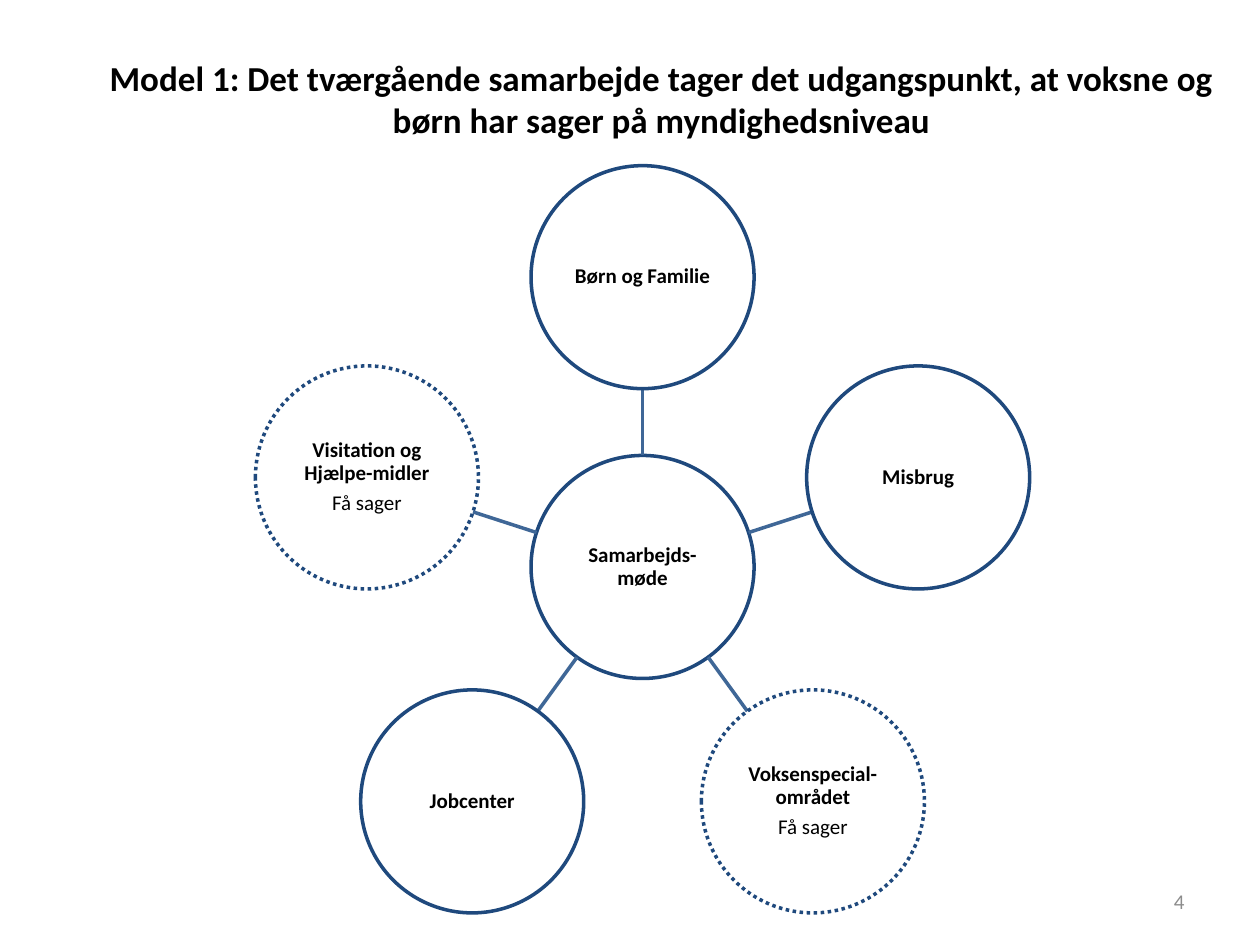
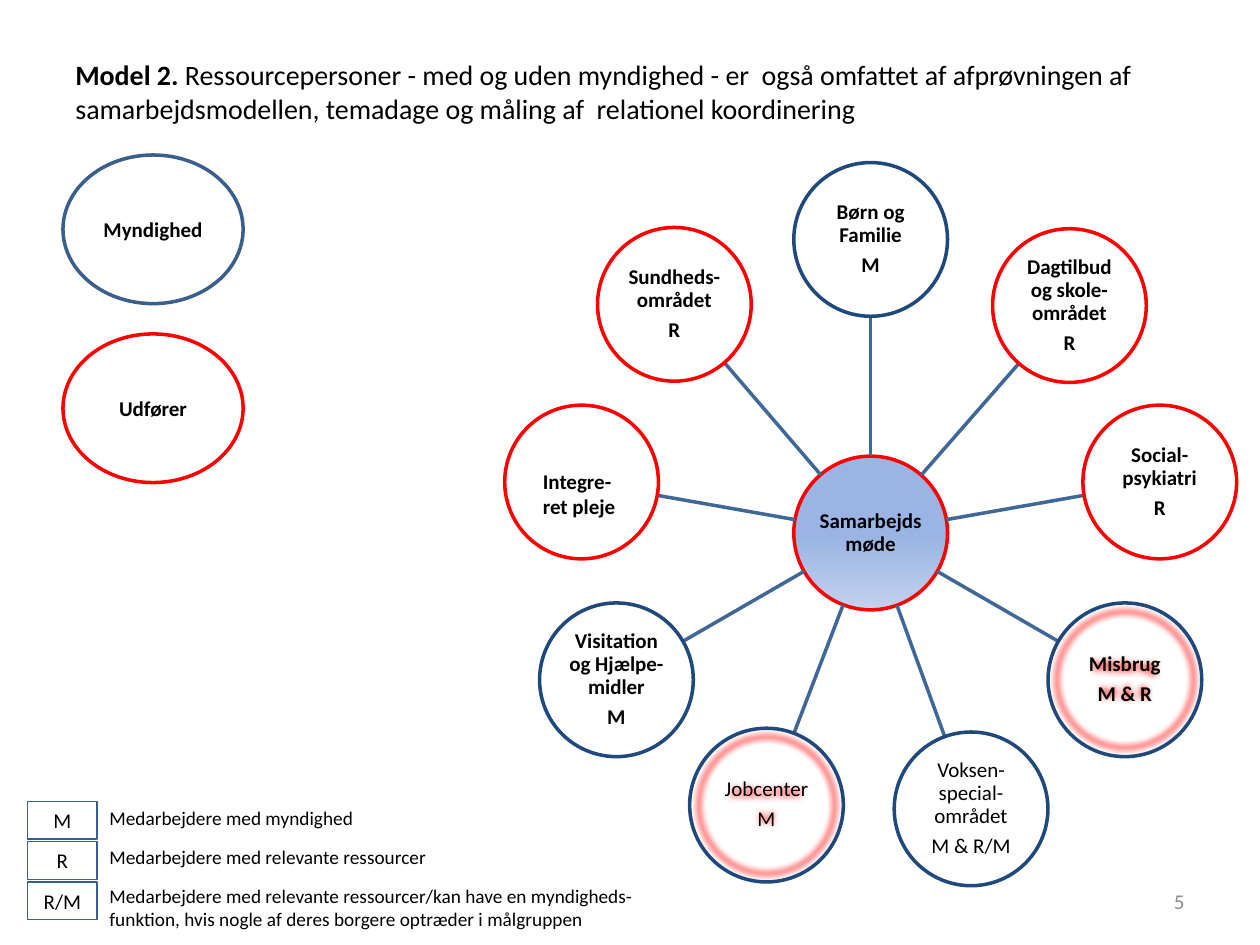
import math
from dataclasses import dataclass

from lxml import etree
from pptx import Presentation
from pptx import util as u
from pptx.dml.color import RGBColor
from pptx.enum import dml, shapes, text
from pptx.oxml.ns import qn

FONT = "Calibri"
COLORS = {
    "ink": "000000",
    "paper": "FFFFFF",
    "navy": "1F497D",
    "spoke": "3F6797",
    "steel": "3A5F8C",
    "red": "FF0000",
    "number": "8C8C8C",
    "hub_top": "9AB5E4",
    "hub_bottom": "C2D1ED",
}
NUMBER_BOX = (7.17, 6.95, 2.33, 0.4)


@dataclass
class Node:
    """One circle of a wheel: its lines of text and its style."""

    lines: tuple = ()
    outline: str = "navy"
    bold: bool = True
    dotted: bool = False
    glow: bool = False
    nudge: tuple = (0, 0)


def color(name):
    """Return a named colour."""
    return RGBColor.from_string(COLORS[name])


def write(shape, lines, size=12, bold=False, ink="ink", align=text.PP_ALIGN.LEFT,
          anchor=text.MSO_ANCHOR.TOP, inset=None, spacing=None, after=None):
    """Write the lines as paragraphs of one style; a line may be a list of (words, bold)."""
    frame = shape.text_frame
    frame.word_wrap = True
    frame.vertical_anchor = anchor
    if inset is not None:
        frame.margin_left = frame.margin_right = u.Inches(inset)
        frame.margin_top = frame.margin_bottom = u.Inches(inset)
    for index, line in enumerate(lines):
        para = frame.add_paragraph() if index else frame.paragraphs[0]
        para.alignment = align
        para.line_spacing = spacing
        para.space_after = after
        font = para.font
        font.name, font.size, font.bold = FONT, u.Pt(size), bold
        font.color.rgb = color(ink)
        if isinstance(line, str):
            para.add_run().text = line
            continue
        for words, strong in line:
            span = para.add_run()
            span.text = words
            span.font.bold = strong


def add_text(page, box, lines, **style):
    """Add a text box."""
    label = page.shapes.add_textbox(*map(u.Inches, box))
    write(label, lines, **style)
    return label


def add_outlined(page, kind, box, outline, width=2):
    """Add an unfilled shape with a coloured outline."""
    shape = page.shapes.add_shape(kind, *map(u.Inches, box))
    shape.shadow.inherit = False
    shape.fill.background()
    shape.line.color.rgb = color(outline)
    shape.line.width = u.Pt(width)
    return shape


def add_glow(shape):
    """Give a shape a soft red ring inside its outline."""
    effects = shape._element.spPr.find(qn("a:effectLst"))
    ring = etree.SubElement(effects, qn("a:outerShdw"), blurRad="50800", dist="0",
                            sx="88000", sy="88000", algn="ctr", rotWithShape="0")
    etree.SubElement(ring, qn("a:srgbClr"), val=COLORS["red"])


def add_circle(page, center, size, node):
    """Add one circle of a wheel with its text."""
    box = (center[0] - size / 2, center[1] - size / 2, size, size)
    circle = add_outlined(page, shapes.MSO_SHAPE.OVAL, box, node.outline)
    if node.dotted:
        circle.line.dash_style = dml.MSO_LINE.ROUND_DOT
    if node.glow:
        add_glow(circle)
    if node.lines:
        write(circle, node.lines, bold=node.bold, align=text.PP_ALIGN.CENTER,
              anchor=text.MSO_ANCHOR.MIDDLE, inset=0.01, spacing=0.9, after=u.Pt(4.2))
    return circle


def add_spoke(page, start, end, gap):
    """Join two circles, stopping a gap short of both centres."""
    reach = math.dist(start, end)
    step = [(b - a) * gap / reach for a, b in zip(start, end)]
    line = page.shapes.add_connector(
        shapes.MSO_CONNECTOR.STRAIGHT,
        u.Inches(start[0] + step[0]), u.Inches(start[1] + step[1]),
        u.Inches(end[0] - step[0]), u.Inches(end[1] - step[1]))
    line.line.color.rgb = color("spoke")
    line.line.width = u.Pt(2)
    etree.SubElement(line._element.spPr, qn("a:effectLst"))


def add_wheel(page, center, radius, size, hub, nodes):
    """Place nodes clockwise from the top around a hub; return the hub circle."""
    hub_circle = add_circle(page, center, size, hub)
    for index, node in enumerate(nodes):
        turn = math.tau * index / len(nodes)
        place = (center[0] + radius * math.sin(turn) + node.nudge[0],
                 center[1] - radius * math.cos(turn) + node.nudge[1])
        add_spoke(page, center, place, size / 2)
        add_circle(page, place, size, node)
    return hub_circle


def add_roles(page, box, roles):
    """Stack the ovals that explain the outline colours."""
    left, top, width, height = box
    for index, (role, outline) in enumerate(roles):
        place = (left, top + index * 1.42, width, height)
        oval = add_outlined(page, shapes.MSO_SHAPE.OVAL, place, outline)
        write(oval, [role], bold=True, align=text.PP_ALIGN.CENTER,
              anchor=text.MSO_ANCHOR.MIDDLE)


def add_legend(page, box, entries):
    """List the letter codes with their meaning."""
    left, top, width, height = box
    key_width = 0.55
    for index, (code, meaning) in enumerate(entries):
        place = (left, top + 0.01 + index * 0.32, key_width, 0.3)
        key = add_outlined(page, shapes.MSO_SHAPE.RECTANGLE, place, "steel", 0.75)
        key.fill.solid()
        key.fill.fore_color.rgb = color("paper")
        write(key, [code], align=text.PP_ALIGN.CENTER)
        row = top + index * 0.31
        add_text(page, (left + key_width, row, width - key_width, top + height - row),
                 [meaning], size=11)


def add_page(deck, number, box, title, **style):
    """Add a blank page with its title and page number."""
    page = deck.slides.add_slide(deck.slide_layouts[6])
    middle = text.MSO_ANCHOR.MIDDLE
    add_text(page, box, [title], anchor=middle, **style)
    add_text(page, NUMBER_BOX, [str(number)], ink="number",
             align=text.PP_ALIGN.RIGHT, anchor=middle)
    return page


def build_model_one(deck):
    """Build the page of the five authorities."""
    page = add_page(
        deck, 4, (0.75, 0.4, 9, 0.77),
        "Model 1: Det tværgående samarbejde tager det udgangspunkt, "
        "at voksne og børn har sager på myndighedsniveau",
        size=20, bold=True, align=text.PP_ALIGN.CENTER)
    few = [("Få sager", False)]
    add_wheel(page, (5.1, 4.5), 2.3, 1.77, Node(("Samarbejds-møde",)), [
        Node(("Børn og Familie",)),
        Node(("Misbrug",)),
        Node(("Voksenspecial-området", few), dotted=True),
        Node(("Jobcenter",)),
        Node(("Visitation og Hjælpe-midler", few), dotted=True),
    ])


def build_model_two(deck):
    """Build the page of authorities and resource persons."""
    page = add_page(
        deck, 5, (0.5, 0.3, 9, 0.85),
        [("Model 2. ", True),
         ("Ressourcepersoner - med og uden myndighed - er  også omfattet af afprøvningen "
          "af samarbejdsmodellen, temadage og måling af  relationel koordinering", False)],
        size=16)
    hub = add_wheel(page, (6.91, 4.23), 2.33, 1.22, Node(("Samarbejdsmøde",), "red"), [
        Node(("Børn og Familie", "M")),
        Node(("Dagtilbud og skole-området", "R"), "red", nudge=(0.08, -0.02)),
        Node(("Social-psykiatri", "R"), "red"),
        Node(("Misbrug", "M & R"), glow=True),
        Node(("Voksen-special-området", "M & R/M"), bold=False),
        Node(("Jobcenter", "M"), bold=False, glow=True, nudge=(-0.03, -0.03)),
        Node(("Visitation og Hjælpe-midler", "M")),
        Node(outline="red"),
        Node(("Sundheds-området", "R"), "red", nudge=(-0.06, -0.03)),
    ])
    hub.fill.gradient()
    hub.fill.gradient_angle = 270
    shades = ((0.51, "hub_top"), (1, "hub_bottom"))
    for stop, (position, shade) in zip(hub.fill.gradient_stops, shades):
        stop.position = position
        stop.color.rgb = color(shade)
    add_text(page, (4.21, 3.67, 0.79, 0.5), ["Integre-ret pleje"], bold=True)
    add_legend(page, (0.22, 6.35, 4.92, 1.09), [
        ("M", "Medarbejdere med myndighed"),
        ("R", "Medarbejdere med relevante ressourcer"),
        ("R/M", "Medarbejdere med relevante ressourcer/kan have en myndigheds-funktion, "
                "hvis nogle af deres borgere optræder i målgruppen"),
    ])
    add_roles(page, (0.5, 1.23, 1.43, 1.18), [("Myndighed", "steel"), ("Udfører", "red")])


def main():
    """Build and save the deck."""
    deck = Presentation()
    deck.slide_width, deck.slide_height = u.Inches(10), u.Inches(7.5)
    build_model_one(deck)
    build_model_two(deck)
    deck.save("out.pptx")


if __name__ == "__main__":
    main()
